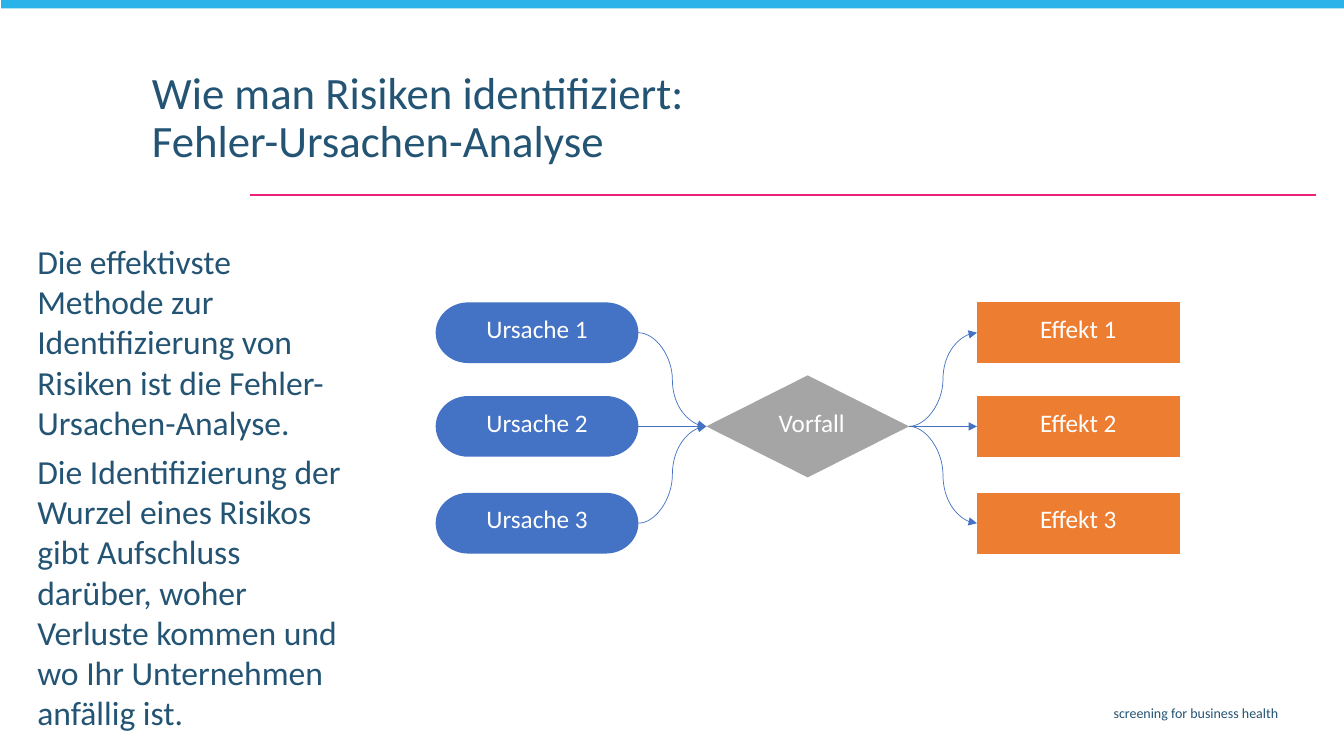
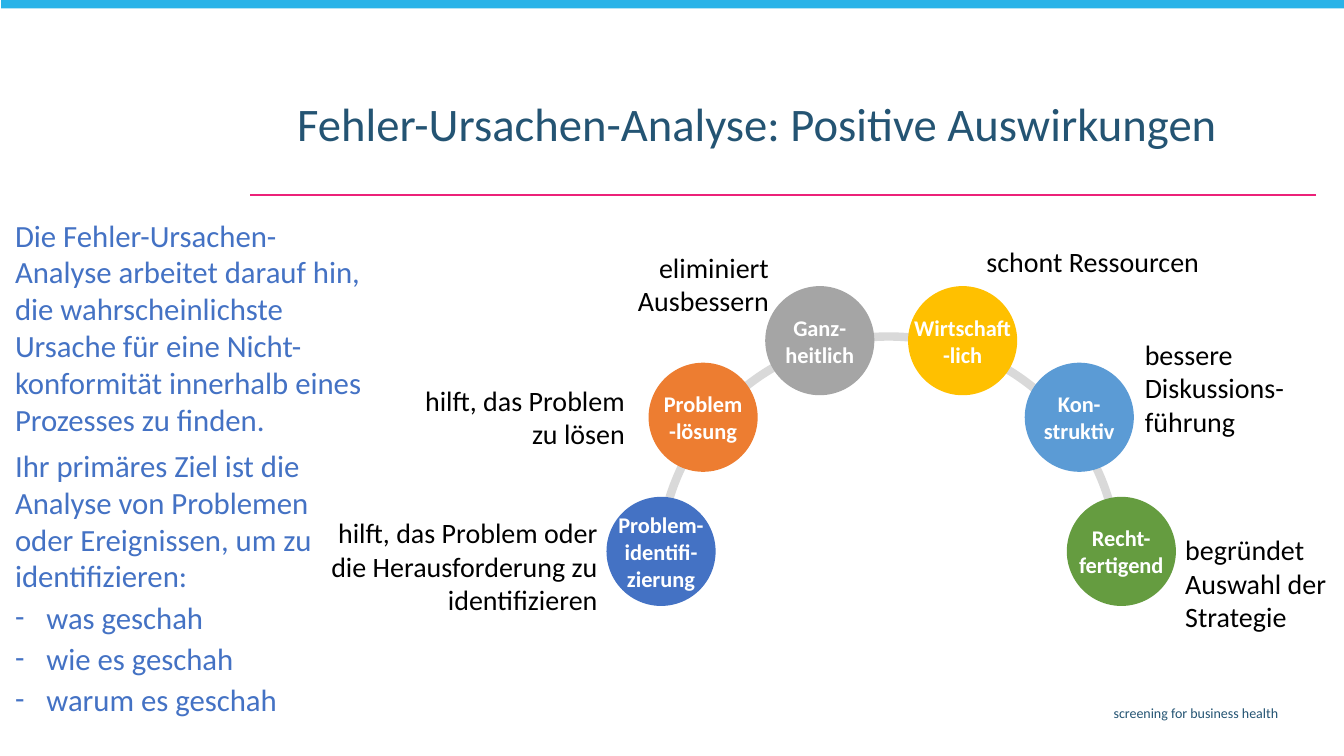
from lxml import etree
from pptx import Presentation
from pptx.dml.color import RGBColor
from pptx.enum.shapes import MSO_CONNECTOR as LINK, MSO_SHAPE as SHAPE
from pptx.enum.text import MSO_ANCHOR as ANCHOR, PP_ALIGN as ALIGN
from pptx.oxml.ns import qn
from pptx.util import Cm, Pt

# Shared palette and format values
NAVY, SKY, PINK, BLACK, WHITE = "245473", "29B3E8", "EC2179", "000000", "FFFFFF"
BLUE, ORANGE, GRAY, RAIL = "4472C4", "ED7D31", "A5A5A5", "D9D9D9"
GOLD, AZURE, GREEN = "FFC000", "5B9BD5", "659C40"
FONT = "Calibri"

TITLE = {"line_spacing": 0.9}
FOOTER = {"alignment": ALIGN.RIGHT}
STEP = {"alignment": ALIGN.CENTER, "line_spacing": Pt(15.4)}
CENTERED = {"alignment": ALIGN.CENTER}
BODY_INSETS, LABEL_INSETS, NO_INSETS = (0.23, 0.1), (0.1, 0.05), (0, 0)


def color(hex_value):
    return RGBColor.from_string(hex_value)


def apply(target, values):
    for name, value in values.items():
        setattr(target, name, value)


def write(frame, paragraphs, size, hue, bold=False, layout=None, gap=0,
          insets=(0.25, 0.13), anchor=ANCHOR.TOP, wrap=True):
    """Fill a text frame; every paragraph gets the same format."""
    side, edge = Cm(insets[0]), Cm(insets[1])
    apply(frame, {"word_wrap": wrap, "vertical_anchor": anchor,
                  "margin_left": side, "margin_right": side,
                  "margin_top": edge, "margin_bottom": edge})
    for index, words in enumerate(paragraphs):
        par = frame.add_paragraph() if index else frame.paragraphs[0]
        par.text = words
        apply(par, layout or {})
        if index and gap:
            par.space_before = Pt(gap)
        for run in par.runs:
            apply(run.font, {"name": FONT, "size": Pt(size), "bold": bold})
            run.font.color.rgb = color(hue)


def add_text(slide, box, paragraphs, size, hue, **options):
    frame = slide.shapes.add_textbox(*map(Cm, box)).text_frame
    write(frame, paragraphs, size, hue, **options)
    return frame


def add_block(slide, kind, box, fill):
    block = slide.shapes.add_shape(kind, *map(Cm, box))
    block.shadow.inherit = False
    block.fill.solid()
    block.fill.fore_color.rgb = color(fill)
    block.line.fill.background()
    return block


def add_link(slide, kind, ends, hue, width):
    link = slide.shapes.add_connector(kind, *map(Cm, ends))
    link.line.color.rgb = color(hue)
    link.line.width = Pt(width)
    etree.SubElement(link._element.spPr, qn("a:effectLst"))
    return link


def add_arrow(slide, source, target):
    """Arrow from the right side of source to the left side of target."""
    level = abs(source.top + source.height / 2 - target.top - target.height / 2) < Cm(0.02)
    arrow = add_link(slide, LINK.STRAIGHT if level else LINK.CURVE, (0, 0, 1, 1), BLUE, 0.5)
    arrow.begin_connect(source, 3)
    arrow.end_connect(target, 1)
    etree.SubElement(arrow.line._get_or_add_ln(), qn("a:tailEnd"), type="triangle")


def add_dash(par):
    props = par._p.get_or_add_pPr()
    props.set("marL", str(Cm(0.79)))
    props.set("indent", str(-Cm(0.79)))
    etree.SubElement(props, qn("a:buFont"), typeface=FONT)
    etree.SubElement(props, qn("a:buChar"), char="-")
    par.space_before = Pt(3)


def start_slide(deck, title, title_box, title_size):
    """Blank slide with rule, top band, footer and title."""
    slide = deck.slides.add_slide(deck.slide_layouts[6])
    add_link(slide, LINK.STRAIGHT, (33.17, 4.91, 6.3, 4.91), PINK, 1.5)
    add_block(slide, SHAPE.RECTANGLE, (0.03, 0, 33.84, 0.21), SKY)
    add_text(slide, (9.27, 17.63, 23.19, 0.74), ["screening for business health"],
             10, NAVY, layout=FOOTER)
    add_text(slide, title_box, [title], title_size, NAVY, layout=TITLE)
    return slide


def add_flow(slide, left, top):
    """Causes lead to the incident, the incident to its effects."""
    width, height, pitch = 5.11, 1.53, 6.82
    rows = (0, 2.36, 4.8)

    def add_step(kind, column, y, step_height, fill, words):
        box = (left + column * pitch, top + y, width, step_height)
        step = add_block(slide, kind, box, fill)
        write(step.text_frame, [words], 18, WHITE, layout=STEP,
              insets=NO_INSETS, anchor=ANCHOR.MIDDLE)
        return step

    incident_height = 2.57
    incident = add_step(SHAPE.FLOWCHART_DECISION, 1, rows[1] + (height - incident_height) / 2,
                        incident_height, GRAY, "Vorfall")
    incident.text_frame.margin_left = Cm(0.2)
    for number, y in enumerate(rows, 1):
        cause = add_step(SHAPE.FLOWCHART_TERMINATOR, 0, y, height, BLUE, f"Ursache {number}")
        effect = add_step(SHAPE.FLOWCHART_PROCESS, 2, y, height, ORANGE, f"Effekt {number}")
        add_arrow(slide, cause, incident)
        add_arrow(slide, incident, effect)


def add_benefit_arc(slide, left, top):
    """Six benefits in mirrored pairs along a half circle."""
    diameter, disc = 11.58, 2.75
    rail = slide.shapes.add_shape(SHAPE.ARC, *map(Cm, (left, top, diameter, diameter)))
    rail.shadow.inherit = False
    rail.fill.background()
    rail.adjustments[0], rail.adjustments[1] = 108, 0
    rail.line.color.rgb = color(RAIL)
    rail.line.width = Pt(6)

    # Distance from the axis and top of each pair, then its left and right benefit
    axis = left + diameter / 2 + 0.06
    pairs = [
        (5.8, 4.04, ("Problem-\videntifi-\vzierung", BLUE), ("Recht-\vfertigend", GREEN)),
        (4.74, 0.66, ("Problem\v-lösung", ORANGE), ("Kon-\vstruktiv", AZURE)),
        (1.8, -1.27, ("Ganz-\vheitlich", GRAY), ("Wirtschaft\v-lich", GOLD)),
    ]
    for offset, y, *benefits in pairs:
        for side, (words, fill) in zip((-1, 1), benefits):
            box = (axis + side * offset - disc / 2, top + y, disc, disc)
            benefit = add_block(slide, SHAPE.OVAL, box, fill)
            write(benefit.text_frame, [words], 16, WHITE, bold=True, layout=CENTERED,
                  insets=NO_INSETS, anchor=ANCHOR.MIDDLE, wrap=False)

    # Explanations: x, y, width, height relative to the arc
    right, start = ALIGN.RIGHT, ALIGN.LEFT
    notes = [
        (-8.43, 4.45, 6.98, 2.67, right,
         "hilft, das Problem oder die Herausforderung zu identifizieren"),
        (-6.5, 1.12, 5.74, 1.8, right, "hilft, das Problem zu lösen"),
        (-2.69, -2.23, 5.56, 1.8, right, "eliminiert Ausbessern"),
        (8.15, -2.79, 5.56, 1.8, start, "schont Ressourcen"),
        (12.14, -0.05, 4.5, 2.67, start, "bessere Diskussions-\vführung"),
        (13.16, 4.88, 4.06, 2.67, start, "begründet Auswahl der \vStrategie"),
    ]
    for x, y, width, height, align, words in notes:
        add_text(slide, (left + x, top + y, width, height), [words], 20, BLACK,
                 layout={"alignment": align}, insets=LABEL_INSETS, anchor=ANCHOR.MIDDLE)


def build_identification(deck):
    slide = start_slide(deck, "Wie man Risiken identifiziert: Fehler-Ursachen-Analyse",
                        (3.58, 1.65, 16.2, 1.93), 32)
    add_text(slide, (0.71, 5.96, 8.33, 12.9), [
        "Die effektivste Methode zur Identifizierung von Risiken ist die "
        "Fehler-Ursachen-Analyse.",
        "Die Identifizierung der Wurzel eines Risikos gibt Aufschluss darüber, "
        "woher Verluste kommen und wo Ihr Unternehmen anfällig ist.",
    ], 24, NAVY, gap=6, insets=BODY_INSETS)
    add_flow(slide, 10.98, 7.62)


def build_benefits(deck):
    slide = start_slide(deck, "Fehler-Ursachen-Analyse: Positive Auswirkungen",
                        (7.24, 2.43, 24.59, 1.93), 33.3)
    add_benefit_arc(slide, 16.61, 8.48)
    goals = add_text(slide, (0.15, 5.35, 9.25, 12.98), [
        "Die Fehler-Ursachen-Analyse arbeitet darauf hin, die wahrscheinlichste "
        "Ursache für eine Nicht-konformität innerhalb eines Prozesses zu finden.",
        "Ihr primäres Ziel ist die Analyse von Problemen oder Ereignissen, "
        "um zu identifizieren:",
        "was geschah", "wie es geschah", "warum es geschah",
    ], 22, BLUE, gap=6, insets=BODY_INSETS)
    for question in goals.paragraphs[2:]:
        add_dash(question)


def main():
    deck = Presentation()
    apply(deck, {"slide_width": Cm(33.87), "slide_height": Cm(19.05)})
    build_identification(deck)
    build_benefits(deck)
    deck.save("out.pptx")


if __name__ == "__main__":
    main()
